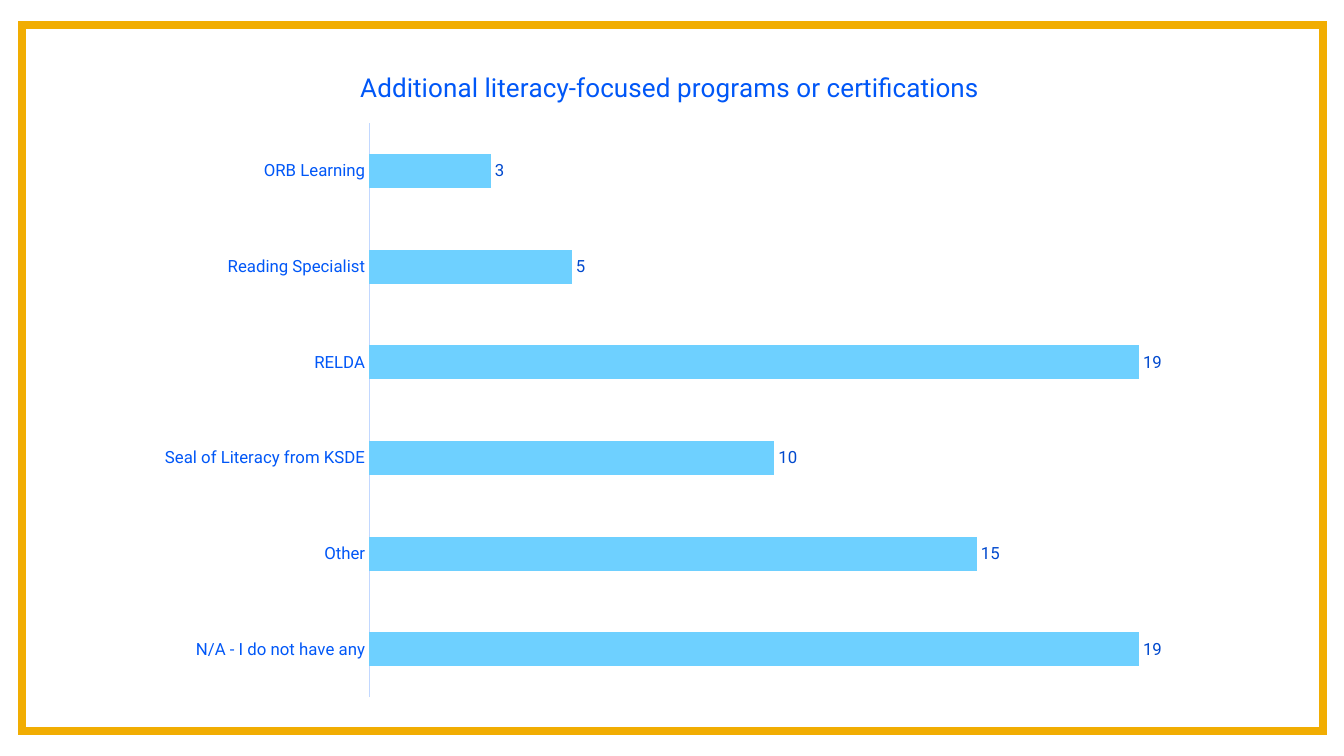
from lxml import etree
from pptx import Presentation
from pptx.chart.data import CategoryChartData
from pptx.dml.color import RGBColor
from pptx.enum.chart import XL_CHART_TYPE, XL_LABEL_POSITION, XL_TICK_MARK
from pptx.enum.shapes import MSO_SHAPE
from pptx.oxml.ns import qn
from pptx.util import Pt

PX = 9144  # 100 px to the inch
BAR = XL_CHART_TYPE.BAR_CLUSTERED
OUTSIDE = XL_LABEL_POSITION.OUTSIDE_END
NO_TICK = XL_TICK_MARK.NONE

WHITE = RGBColor(0xFF, 0xFF, 0xFF)
GOLD = RGBColor(0xF1, 0xAD, 0x02)
SKY = RGBColor(0x6E, 0xD0, 0xFF)
PALE = RGBColor(0xC2, 0xD8, 0xFF)
BLUE = RGBColor(0x00, 0x57, 0xF7)
LABEL_BLUE = RGBColor(0x00, 0x49, 0xCE)
NAVY = RGBColor(0x00, 0x25, 0x69)

PROGRAMS = {
    "N/A - I do not have any": 19,
    "Other": 15,
    "Seal of Literacy from KSDE": 10,
    "RELDA": 19,
    "Reading Specialist": 5,
    "ORB Learning": 3,
}


def set_font(font, size, color):
    values = {"name": "Roboto", "size": Pt(size), "bold": False}
    for key, value in values.items():
        setattr(font, key, value)
    font.color.rgb = color


def set_layout(parent, index, values):
    """Place a chart part by fractions of the chart's size."""
    for old in parent.findall(qn("c:layout")):
        parent.remove(old)
    layout = etree.Element(qn("c:layout"))
    manual = etree.SubElement(layout, qn("c:manualLayout"))
    for tag, value in values.items():
        etree.SubElement(manual, qn("c:" + tag)).set("val", str(value))
    parent.insert(index, layout)


prs = Presentation()
prs.slide_width, prs.slide_height = 1333 * PX, 750 * PX
s = prs.slides.add_slide(prs.slide_layouts[6])

# Gold frame with square corners
frame = s.shapes.add_shape(MSO_SHAPE.RECTANGLE, 22 * PX, 25 * PX, 1290 * PX, 700 * PX)
frame.shadow.inherit = False
frame.fill.solid()
frame.fill.fore_color.rgb = WHITE
frame.line.color.rgb = GOLD
frame.line.width = Pt(6)
outline = frame._element.spPr.find(qn("a:ln"))
etree.SubElement(outline, qn("a:miter")).set("lim", "800000")

# Bar chart
data = CategoryChartData()
data.categories = list(PROGRAMS)
data.add_series("Series 1", list(PROGRAMS.values()))
chart = s.shapes.add_chart(BAR, 143 * PX, 45 * PX, 1048 * PX, 660 * PX, data).chart
set_font(chart.font, 10, NAVY)
chart.has_legend = False

# Title
chart.has_title = True
title = chart.chart_title
title.include_in_layout = False
p = title.text_frame.paragraphs[0]
r = p.add_run()
r.text = "Additional literacy-focused programs or certifications"
set_font(r.font, 18.6, BLUE)
set_layout(title._element, 1, {"xMode": "edge", "yMode": "edge", "x": 0.2, "y": 0.03})

# Plot area
plot_area = chart._chartSpace.chart.plotArea
set_layout(plot_area, 0, {
    "layoutTarget": "inner", "xMode": "edge", "yMode": "edge",
    "x": 0.213, "y": 0.117, "w": 0.767, "h": 0.863,
})

# Axes
axis = chart.category_axis
axis.major_tick_mark = axis.minor_tick_mark = NO_TICK
set_font(axis.tick_labels.font, 12, BLUE)
axis.format.line.color.rgb = PALE
axis.format.line.width = Pt(0.75)
scale = chart.value_axis
scale.minimum_scale, scale.maximum_scale = 0, 20
scale.has_major_gridlines = False
scale.visible = False

# Bars and their values
plot = chart.plots[0]
plot.gap_width = 182
plot.vary_by_categories = False
series = plot.series[0]
series.format.fill.solid()
series.format.fill.fore_color.rgb = SKY
labels = series.data_labels
labels.show_value = True
labels.position = OUTSIDE
set_font(labels.font, 12, LABEL_BLUE)

prs.save("out.pptx")
